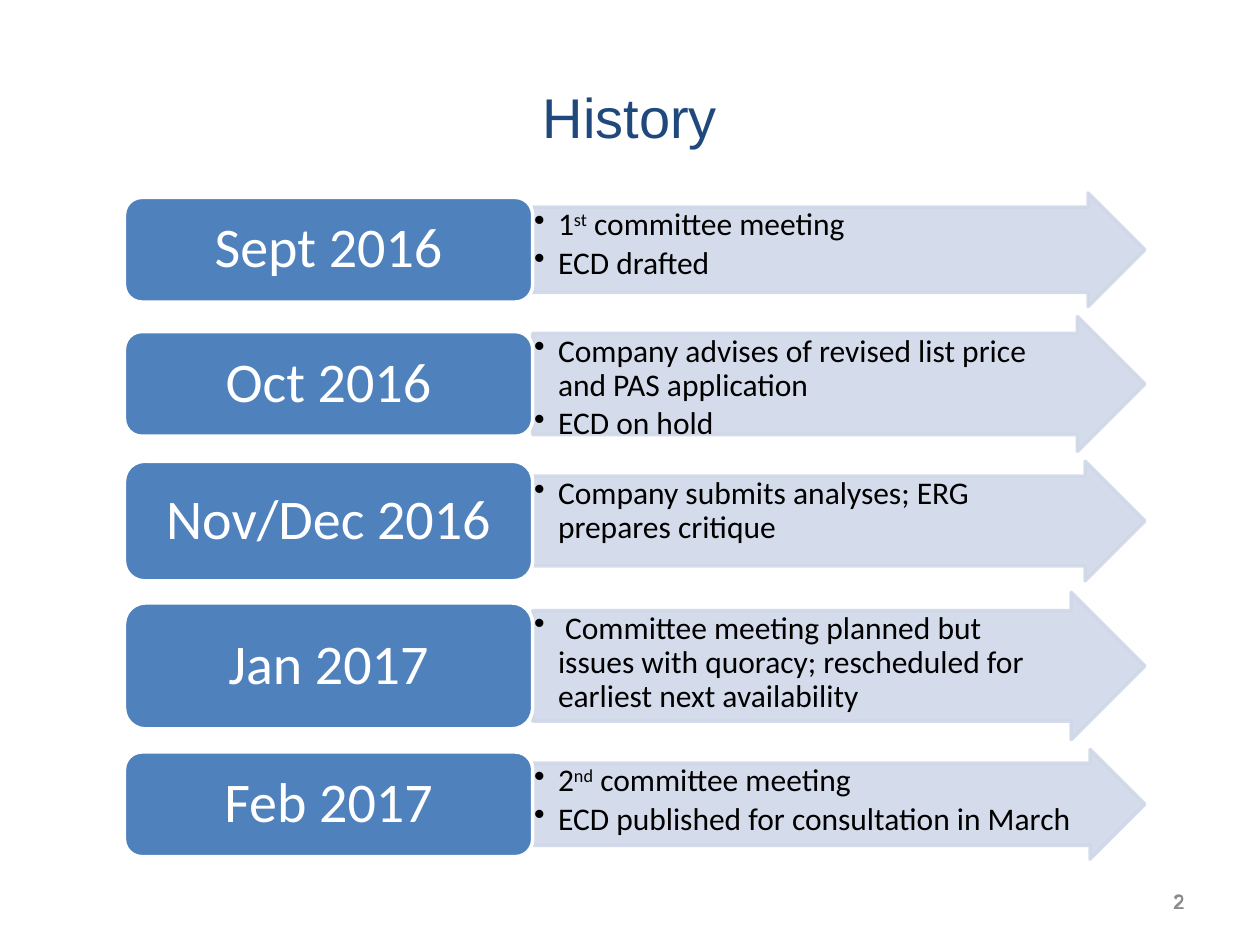
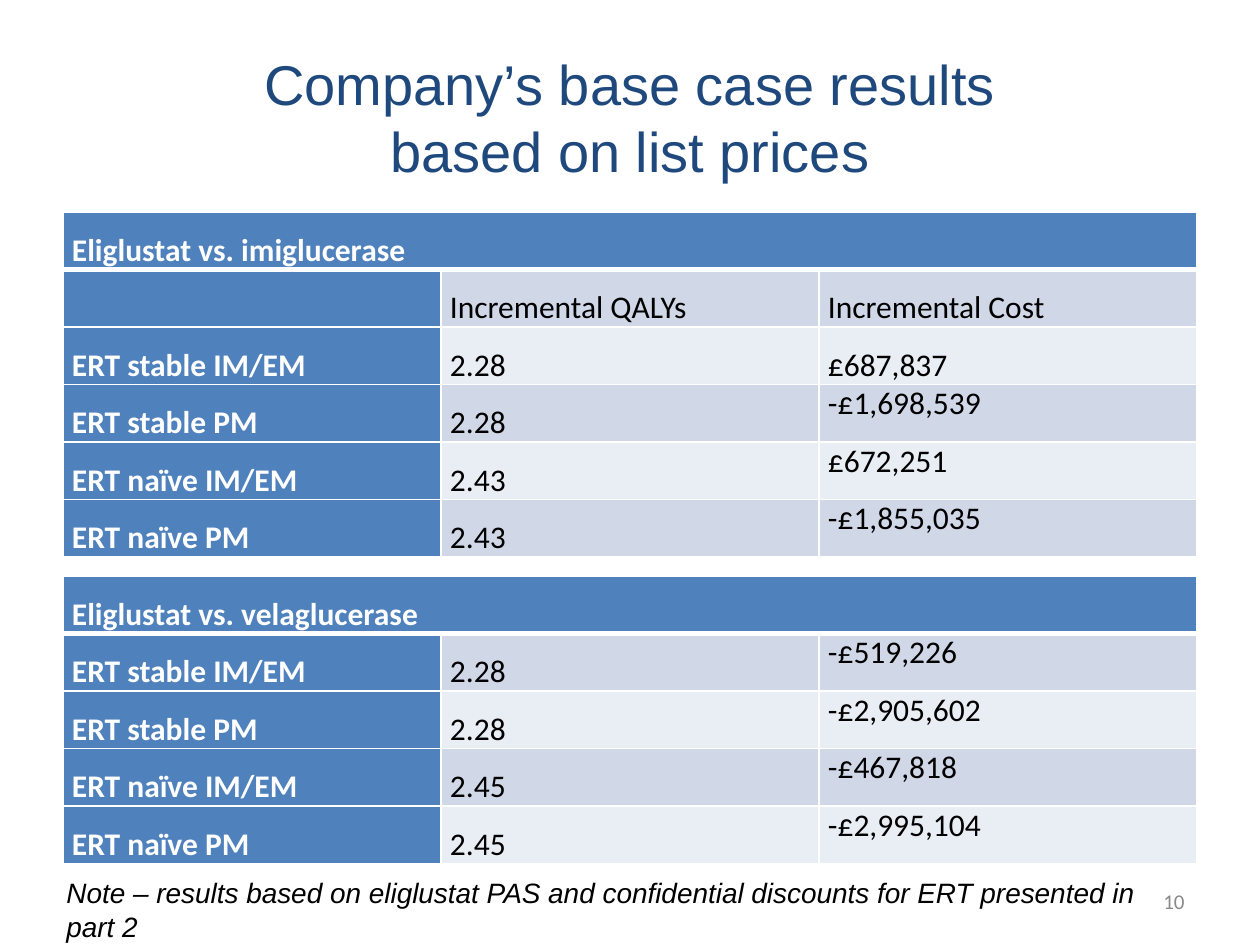
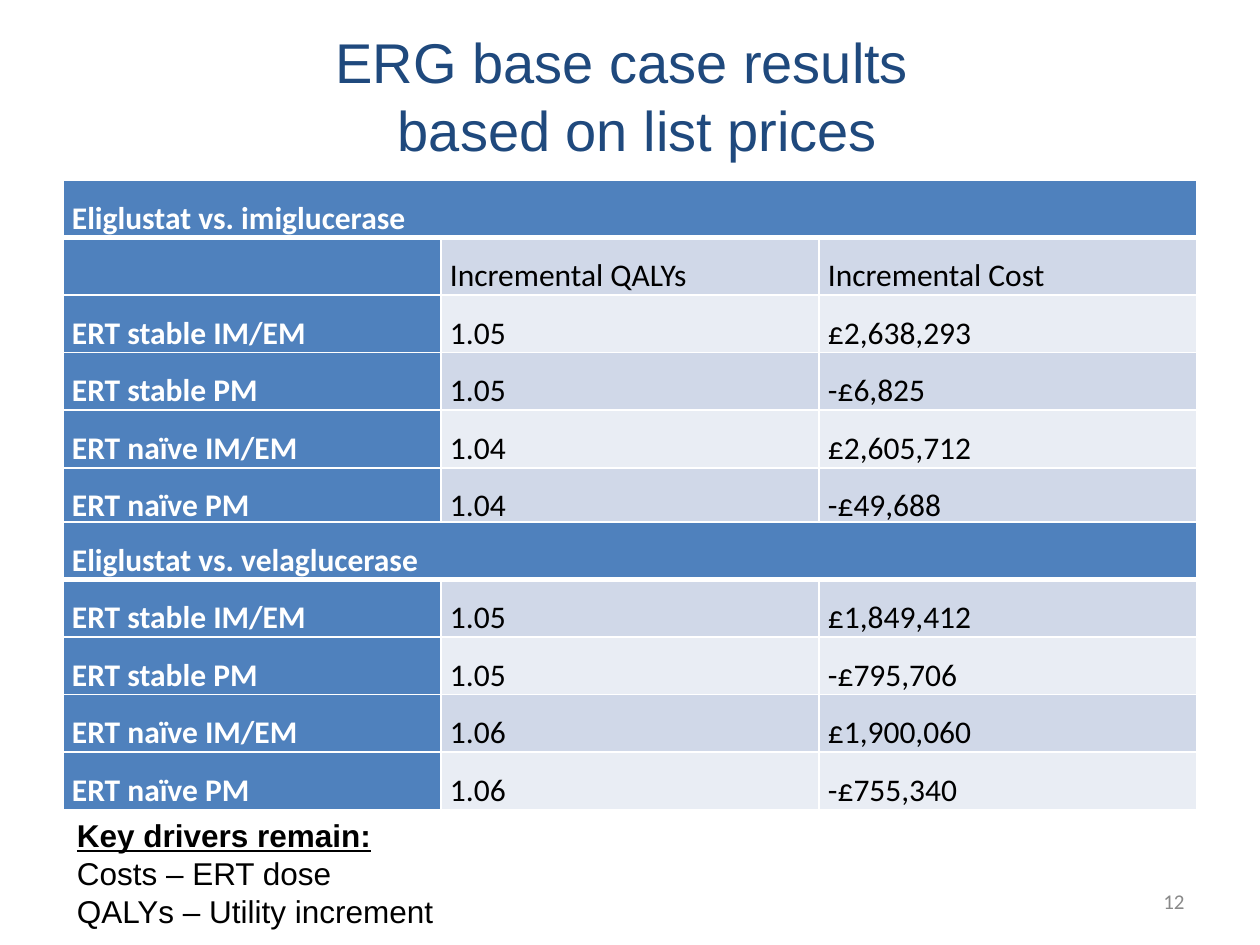
import pptx
import pptx.dml.color
import pptx.enum.shapes
import pptx.enum.text
import pptx.oxml
import pptx.oxml.ns
import pptx.util
from lxml import etree

Cm, Pt = pptx.util.Cm, pptx.util.Pt
ALIGN, ANCHOR = pptx.enum.text.PP_ALIGN, pptx.enum.text.MSO_ANCHOR
SHAPE = pptx.enum.shapes.MSO_SHAPE
qn = pptx.oxml.ns.qn

# Shared look
NAVY, BLUE, ARROW_BLUE = "1F497D", "4F81BD", "D0D8E8"
BAND_DARK, BAND_LIGHT = "D0D8E8", "E9EDF4"
WHITE, BLACK, GREY = "FFFFFF", "000000", "898989"
TITLE_FONT, BODY_FONT = "Arial", "Calibri"


def rgb(value):
    return pptx.dml.color.RGBColor.from_string(value)


def write(frame, lines, font, size, color, align=ALIGN.LEFT, anchor=ANCHOR.TOP):
    """Fill a text frame; text between ^ signs is superscript."""
    frame.word_wrap = True
    frame.vertical_anchor = anchor
    for number, line in enumerate(lines):
        paragraph = frame.add_paragraph() if number else frame.paragraphs[0]
        paragraph.text, *rest = line.split("^")
        for position, part in enumerate(rest):
            run = paragraph.add_run()
            run.text = part
            if position % 2 == 0:
                run.font._element.set("baseline", "30000")
        paragraph.alignment = align
        paragraph.font.name = font
        paragraph.font.size = Pt(size)
        paragraph.font.color.rgb = rgb(color)


deck = pptx.Presentation()
deck.slide_width, deck.slide_height = Cm(25.4), Cm(19.05)

# Titles and page numbers
headings = [
    ("History", 0.76, "2", [BODY_FONT, TITLE_FONT]),
    ("Company’s base case results\nbased on list prices", 0.76, "10", [BODY_FONT]),
    ("ERG base case results \n based on list prices", 0.33, "12", [BODY_FONT]),
]
slides = []
for heading, top, page, page_fonts in headings:
    slide = deck.slides.add_slide(deck.slide_layouts[6])
    slides.append(slide)
    title = slide.shapes.add_textbox(Cm(1.27), Cm(top), Cm(22.86), Cm(3.18))
    write(title.text_frame, [heading], TITLE_FONT, 32, NAVY, ALIGN.CENTER, ANCHOR.MIDDLE)
    for page_font in page_fonts:
        page_number = slide.shapes.add_textbox(Cm(18.2), Cm(17.66), Cm(5.93), Cm(1.01))
        write(page_number.text_frame, [page], page_font, 12, GREY, ALIGN.RIGHT, ANCHOR.MIDDLE)
history, company, erg = slides

# History: date, arrow top, arrow height, date box height, events
timeline = [
    ("Sept 2016", 3.89, 2.29, 2.11, ["1^st^ committee meeting", "ECD drafted"]),
    ("Oct 2016", 6.38, 2.72, 2.11,
     ["Company advises of revised list price and PAS application", "ECD on hold"]),
    ("Nov/Dec 2016", 9.3, 2.41, 2.41, ["Company submits analyses; ERG prepares critique"]),
    ("Jan 2017", 11.94, 2.97, 2.54,
     [" Committee meeting planned but issues with quoracy; "
      "rescheduled for earliest next availability"]),
    ("Feb 2017", 15.11, 2.21, 2.11,
     ["2^nd^ committee meeting", "ECD published for consultation in March"]),
]
for date, top, height, date_height, events in timeline:
    arrow = history.shapes.add_shape(
        SHAPE.RIGHT_ARROW, Cm(10.74), Cm(top), Cm(12.34), Cm(height))
    arrow.adjustments[0], arrow.adjustments[1] = 0.75, 0.5
    date_box = history.shapes.add_shape(
        SHAPE.ROUNDED_RECTANGLE, Cm(2.51), Cm(top + (height - date_height) / 2),
        Cm(8.23), Cm(date_height))
    for shape, fill, line in [(arrow, ARROW_BLUE, ARROW_BLUE), (date_box, BLUE, WHITE)]:
        shape.shadow.inherit = False
        shape.fill.solid()
        shape.fill.fore_color.rgb = rgb(fill)
        shape.line.color.rgb = rgb(line)
        shape.line.width = Pt(2)
    for color in arrow._element.spPr.iter(qn("a:srgbClr")):
        etree.SubElement(color, qn("a:alpha"), val="90000")

    write(date_box.text_frame, [date], BODY_FONT, 32, WHITE, ALIGN.CENTER, ANCHOR.MIDDLE)
    date_box.text_frame.paragraphs[0].line_spacing = 0.9

    event_text = arrow.text_frame
    write(event_text, events, BODY_FONT, 18, BLACK)
    event_text.margin_left = event_text.margin_top = event_text.margin_bottom = Cm(0.03)
    event_text.margin_right = Cm(0.03 + height / 4)  # keeps text clear of the arrow tip
    for event in event_text.paragraphs:
        event.line_spacing = 0.9
        event.space_after = Pt(2.7)
        properties = event._p.get_or_add_pPr()
        properties.set("marL", str(Cm(0.48)))
        properties.set("indent", str(-Cm(0.48)))
        bullet = pptx.oxml.parse_xml(
            '<a:buChar xmlns:a="http://schemas.openxmlformats.org/drawingml/2006/main" char="•"/>')
        properties.find(qn("a:defRPr")).addprevious(bullet)

# Result tables: slide, top, first row with compact costs, header, rows
groups = ["ERT stable IM/EM", "ERT stable PM", "ERT naïve IM/EM", "ERT naïve PM"]
column_heads = [("", "Incremental QALYs", "Incremental Cost")]
versus_imi, versus_vela = "Eliglustat vs. imiglucerase", "Eliglustat vs. velaglucerase"
results = [
    (company, 4.27, 3, versus_imi, column_heads, ["2.28", "2.28", "2.43", "2.43"],
     ["£687,837", "-£1,698,539", "£672,251", "-£1,855,035"]),
    (company, 11.61, 1, versus_vela, [], ["2.28", "2.28", "2.45", "2.45"],
     ["-£519,226", "-£2,905,602", "-£467,818", "-£2,995,104"]),
    (erg, 3.63, None, versus_imi, column_heads, ["1.05", "1.05", "1.04", "1.04"],
     ["£2,638,293", "-£6,825", "£2,605,712", "-£49,688"]),
    (erg, 10.52, None, versus_vela, [], ["1.05", "1.05", "1.06", "1.06"],
     ["£1,849,412", "-£795,706", "£1,900,060", "-£755,340"]),
]
ROW_HEIGHT = 1.16
for slide, top, compact_from, comparison, heads, qalys, costs in results:
    rows = [(comparison, "", "")] + heads + list(zip(groups, qalys, costs))
    table = slide.shapes.add_table(
        len(rows), 3, Cm(1.27), Cm(top), Cm(22.86), Cm(ROW_HEIGHT * len(rows))).table
    table.first_col = True
    for row_index, row in enumerate(rows):
        table.rows[row_index].height = Cm(ROW_HEIGHT)
        for column, value in enumerate(row):
            cell = table.cell(row_index, column)
            is_head = row_index == 0 or column == 0
            cell.margin_left = cell.margin_right = Cm(0.18)
            cell.margin_top = cell.margin_bottom = 0
            write(cell.text_frame, [value], BODY_FONT, 18, WHITE if is_head else BLACK)
            paragraph = cell.text_frame.paragraphs[0]
            paragraph.font.bold = is_head
            if column == 2 and compact_from and row_index >= compact_from:
                paragraph.space_before = paragraph.space_after = Pt(3)
            else:
                paragraph.line_spacing = 1.5
            # White borders, heavier between the header and the body
            for side in "LRTB":
                heavy = (side == "B" and row_index == 0) or (side == "T" and row_index == 1)
                border = etree.SubElement(
                    cell._tc.get_or_add_tcPr(), qn("a:ln" + side), w=str(Pt(3 if heavy else 1)))
                paint = etree.SubElement(border, qn("a:solidFill"))
                etree.SubElement(paint, qn("a:srgbClr"), val=WHITE)
            cell.fill.solid()
            band = BAND_DARK if row_index % 2 else BAND_LIGHT
            cell.fill.fore_color.rgb = rgb(BLUE if is_head else band)
    table.cell(0, 0).merge(table.cell(0, 2))

# Note under the company results
note = company.shapes.add_textbox(Cm(1.09), Cm(17.53), Cm(23.04), Cm(1.63))
write(note.text_frame,
      ["Note – results based on eliglustat PAS and confidential discounts for ERT "
       "presented in part 2"], TITLE_FONT, 16, BLACK)
note.text_frame.paragraphs[0].font.italic = True

# Key drivers under the ERG results
drivers = erg.shapes.add_textbox(Cm(1.3), Cm(16.33), Cm(12.7), Cm(2.57))
write(drivers.text_frame,
      ["Key drivers remain:", "Costs – ERT dose", "QALYs – Utility increment"],
      TITLE_FONT, 18, BLACK)
drivers_head = drivers.text_frame.paragraphs[0]
drivers_head.font.bold = drivers_head.font.underline = True

deck.save("out.pptx")
